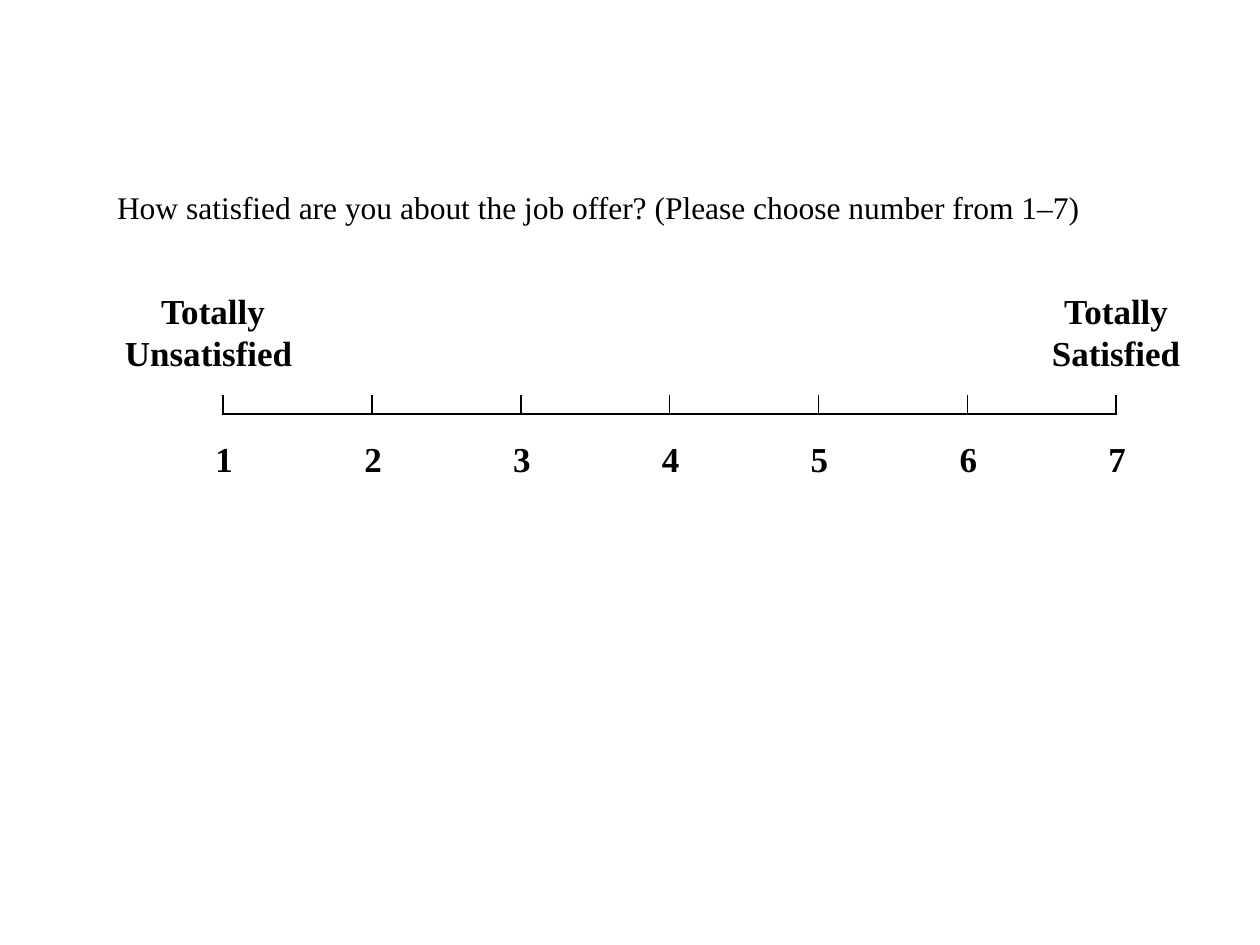
from lxml import etree
from pptx import Presentation
from pptx import util as u
from pptx.dml.color import RGBColor
from pptx.enum import shapes, text
from pptx.oxml import ns

BLACK = RGBColor(0x00, 0x00, 0x00)
WHITE = RGBColor(0xFF, 0xFF, 0xFF)
POINTS = 7
STEP = 3
SCALE_LEFT = 4.5


class Slide:
    """Holds the style and the current page, and adds elements measured in centimetres."""

    def __init__(self, page, font="Times New Roman"):
        self.page = page
        self.font = font

    def label(self, words, left, top, width, height, size=20, bold=True,
              align=text.PP_ALIGN.CENTER):
        box = self.page.shapes.add_textbox(
            u.Cm(left), u.Cm(top), u.Cm(width), u.Cm(height))
        box.text_frame.word_wrap = True
        box.text_frame.auto_size = text.MSO_AUTO_SIZE.SHAPE_TO_FIT_TEXT
        para = box.text_frame.paragraphs[0]
        para.text = words
        para.alignment = align
        para.font.name = self.font
        para.font.size = u.Pt(size)
        para.font.bold = bold
        para.font.color.rgb = BLACK

    def panel(self, left, top, width, height):
        box = self.page.shapes.add_shape(
            shapes.MSO_SHAPE.RECTANGLE,
            u.Cm(left), u.Cm(top), u.Cm(width), u.Cm(height))
        box.shadow.inherit = False
        box.fill.solid()
        box.fill.fore_color.rgb = WHITE
        box.line.color.rgb = WHITE
        box.line.width = u.Pt(2)

    def scale(self, left, top, columns, step, height):
        table = self.page.shapes.add_table(
            1, columns, u.Cm(left), u.Cm(top),
            u.Cm(columns * step), u.Cm(height)).table
        table.first_row = False
        table.horz_banding = False
        for cell in table.iter_cells():
            self.border(cell)
            cell.fill.solid()
            cell.fill.fore_color.rgb = WHITE

    def border(self, cell):
        properties = cell._tc.get_or_add_tcPr()
        for side in ("a:lnL", "a:lnR", "a:lnT", "a:lnB"):
            line = etree.SubElement(properties, ns.qn(side), w=str(u.Pt(1)))
            fill = etree.SubElement(line, ns.qn("a:solidFill"))
            etree.SubElement(fill, ns.qn("a:srgbClr"), val=str(BLACK))


def main():
    deck = Presentation()
    deck.slide_width, deck.slide_height = u.Cm(25.4), u.Cm(19.05)
    slide = Slide(deck.slides.add_slide(deck.slide_layouts[6]))

    slide.scale(SCALE_LEFT, 5.33, POINTS - 1, STEP, 3.02)
    slide.panel(2.31, 3.73, 21.8, 4.2)
    slide.label("Totally Unsatisfied ", 1.5, 5.72, 5.59, 1.96)
    slide.label("Totally Satisfied", 20.3, 5.72, 4.4, 1.96)
    for index in range(POINTS):
        slide.label(str(index + 1), SCALE_LEFT + index * STEP - 0.48, 8.69, 1, 1.12)
    slide.label(
        "How satisfied are you about the job offer? (Please choose number from 1–7)",
        2.11, 3.67, 22.2, 1.03, size=18, bold=False, align=text.PP_ALIGN.LEFT)

    deck.save("out.pptx")


if __name__ == "__main__":
    main()
